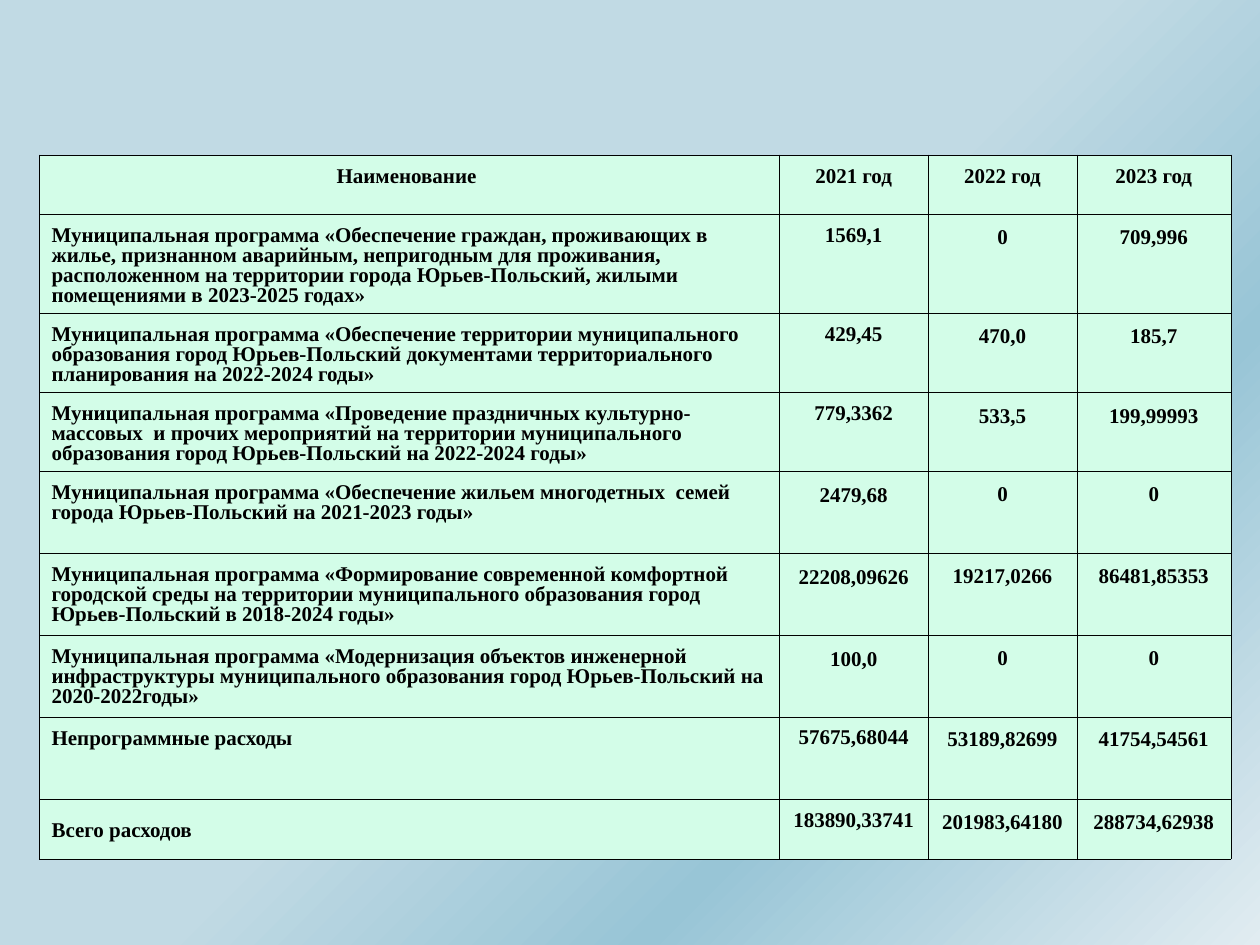
import copy
from dataclasses import dataclass

import pptx
import pptx.dml.color
import pptx.enum.text
import pptx.oxml
import pptx.oxml.ns
import pptx.util

Cm = pptx.util.Cm
Pt = pptx.util.Pt

COLORS = {
    "cell": "D3FDE8",
    "ink": "000000",
    "sky": "C1DAE4",
    "band": "98C5D6",
    "glow": "E1ECF1",
}
BACKGROUND_STOPS = [(0.5, "sky"), (0.72, "band"), (1, "glow")]
FONT = "Times New Roman"
TIGHT_SPACING = 0.86
COLUMN_WIDTHS = [14.92, 3, 3, 3.1]
HIGH, LOW = 0.23, 0.25  # top margins of the cells, cm


@dataclass
class BudgetRow:
    name: str
    values: list[str]
    height: float
    tight_values: int = 1  # leading values with reduced line spacing
    margins: tuple[float, float, float] = (LOW, LOW, LOW)
    anchor: pptx.enum.text.MSO_ANCHOR = pptx.enum.text.MSO_ANCHOR.TOP


ROWS = [
    BudgetRow("Наименование ", ["2021 год", "2022 год", "2023 год"], 1.19, 3),
    BudgetRow("Муниципальная программа «Обеспечение граждан, проживающих в жилье, признанном "
              "аварийным, непригодным для проживания, расположенном на территории города "
              "Юрьев-Польский, жилыми помещениями в 2023-2025 годах»",
              ["1569,1", "0", "709,996"], 1.22),
    BudgetRow("Муниципальная программа «Обеспечение территории муниципального образования город "
              "Юрьев-Польский документами территориального планирования на 2022-2024 годы»",
              ["429,45", "470,0", "185,7"], 1.6),
    BudgetRow("Муниципальная программа «Проведение праздничных культурно-массовых  и прочих "
              "мероприятий на территории муниципального образования город Юрьев-Польский "
              "на 2022-2024 годы»",
              ["779,3362", "533,5", "199,99993"], 1.35),
    BudgetRow("Муниципальная программа «Обеспечение жильем многодетных  семей города "
              "Юрьев-Польский на 2021-2023 годы»",
              ["2479,68", "0", "0"], 1.65, 0, (LOW, HIGH, HIGH)),
    BudgetRow("Муниципальная программа «Формирование современной комфортной городской среды на "
              "территории муниципального образования город Юрьев-Польский в 2018-2024 годы»",
              ["22208,09626", "19217,0266", "86481,85353"], 1.65, 0, (LOW, HIGH, HIGH)),
    BudgetRow("Муниципальная программа «Модернизация объектов инженерной инфраструктуры "
              "муниципального образования город Юрьев-Польский на 2020-2022годы»",
              ["100,0", "0", "0"], 1.65, 0, (LOW, HIGH, HIGH)),
    BudgetRow("Непрограммные расходы",
              ["57675,68044", "53189,82699", "41754,54561"], 1.65, 1, (HIGH, HIGH, HIGH)),
    BudgetRow("Всего расходов",
              ["183890,33741", "201983,64180", "288734,62938"], 1.22,
              anchor=pptx.enum.text.MSO_ANCHOR.MIDDLE),
]


def color(name: str) -> pptx.dml.color.RGBColor:
    return pptx.dml.color.RGBColor.from_string(COLORS[name])


def paint_background(slide) -> None:
    fill = slide.background.fill
    fill.gradient()
    fill.gradient_angle = 315
    stop_list = slide._element.find(".//" + pptx.oxml.ns.qn("a:gsLst"))
    stop_list.append(copy.deepcopy(stop_list[-1]))
    for stop, (position, name) in zip(fill.gradient_stops, BACKGROUND_STOPS):
        stop.position = position
        stop.color.rgb = color(name)


def add_borders(cell) -> None:
    properties = cell._tc.get_or_add_tcPr()
    for index, side in enumerate(("lnL", "lnR", "lnT", "lnB")):
        line = pptx.oxml.parse_xml(
            f'<a:{side} {pptx.oxml.ns.nsdecls("a")} w="{Pt(0.11)}"><a:solidFill>'
            f'<a:srgbClr val="{COLORS["ink"]}"/></a:solidFill></a:{side}>')
        properties.insert(index, line)


def fill_cell(cell, text: str, centered: bool, tight: bool, margin_top: float) -> None:
    cell.fill.solid()
    cell.fill.fore_color.rgb = color("cell")
    add_borders(cell)
    cell.margin_left = cell.margin_right = Cm(0.25)
    cell.margin_top = Cm(margin_top)
    cell.margin_bottom = Cm(0.13)

    cell.text_frame.text = text
    para = cell.text_frame.paragraphs[0]
    alignments = pptx.enum.text.PP_ALIGN
    para.alignment = alignments.CENTER if centered else alignments.LEFT
    if tight:
        para.line_spacing = TIGHT_SPACING
    font = para.runs[0].font
    font.name = FONT
    font.size = Pt(12)
    font.bold = True
    font.color.rgb = color("ink")


def add_budget_table(slide) -> None:
    frame = slide.shapes.add_table(
        len(ROWS), len(COLUMN_WIDTHS), Cm(0.79), Cm(3.12),
        Cm(sum(COLUMN_WIDTHS)), Cm(sum(row.height for row in ROWS)))
    table = frame.table
    table.first_row = table.horz_banding = False
    for column, width in zip(table.columns, COLUMN_WIDTHS):
        column.width = Cm(width)

    for index, row in enumerate(ROWS):
        table.rows[index].height = Cm(row.height)
        name_cell = table.cell(index, 0)
        fill_cell(name_cell, row.name, index == 0, True, LOW)
        name_cell.vertical_anchor = row.anchor
        for place, (value, margin) in enumerate(zip(row.values, row.margins)):
            fill_cell(table.cell(index, place + 1), value, True,
                      place < row.tight_values, margin)


def main() -> None:
    deck = pptx.Presentation()
    deck.slide_width, deck.slide_height = Cm(25.4), Cm(19.05)
    page = deck.slides.add_slide(deck.slide_layouts[6])
    paint_background(page)
    add_budget_table(page)
    deck.save("out.pptx")


if __name__ == "__main__":
    main()
